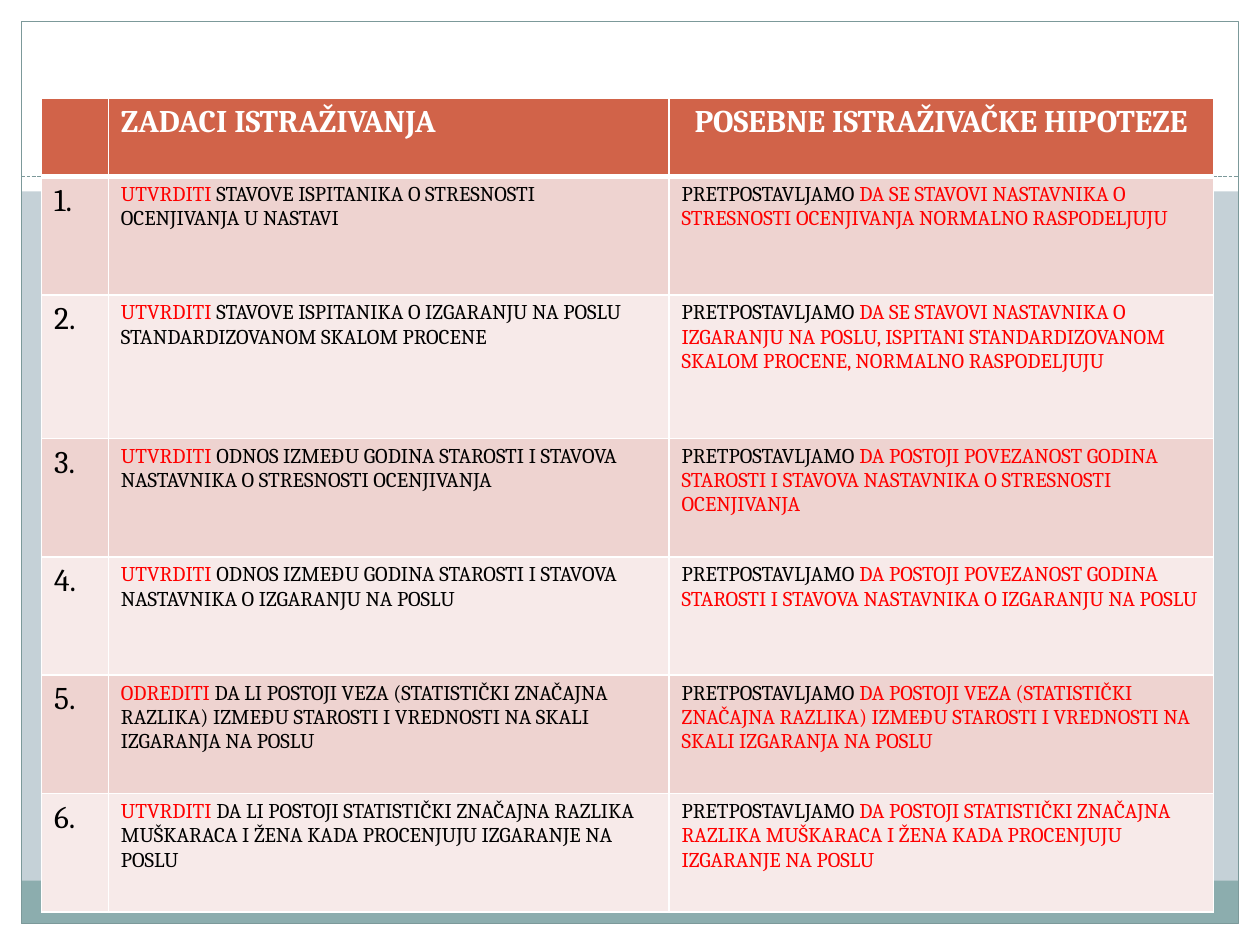
from lxml import etree
from pptx import Presentation, util as u
from pptx.dml.color import RGBColor
from pptx.enum import dml, shapes, text
from pptx.oxml import ns

HUES = {
    "back": "C5D1D7", "white": "FFFFFF", "band": "8CADAE", "edge": "7C999A",
    "head": "D16349", "odd": "EED3D0", "even": "F7EAE9",
    "black": "000000", "red": "FF0000",
}
COLS, ROWS = 100, 75
HEADS = ["", "ZADACI ISTRAŽIVANJA", "POSEBNE ISTRAŽIVAČKE HIPOTEZE"]
GUESS = "PRETPOSTAVLJAMO"
TASKS = [
    ("UTVRDITI", "STAVOVE ISPITANIKA O STRESNOSTI OCENJIVANJA U NASTAVI",
     "DA SE STAVOVI NASTAVNIKA O STRESNOSTI OCENJIVANJA NORMALNO RASPODELJUJU"),
    ("UTVRDITI", "STAVOVE ISPITANIKA O IZGARANJU NA POSLU STANDARDIZOVANOM SKALOM PROCENE",
     "DA SE STAVOVI NASTAVNIKA O IZGARANJU NA POSLU, ISPITANI STANDARDIZOVANOM "
     "SKALOM PROCENE, NORMALNO RASPODELJUJU"),
    ("UTVRDITI", "ODNOS IZMEĐU GODINA STAROSTI I STAVOVA NASTAVNIKA O STRESNOSTI OCENJIVANJA",
     "DA POSTOJI POVEZANOST GODINA STAROSTI I STAVOVA NASTAVNIKA O STRESNOSTI OCENJIVANJA"),
    ("UTVRDITI", "ODNOS IZMEĐU GODINA STAROSTI I STAVOVA NASTAVNIKA O IZGARANJU NA POSLU",
     "DA POSTOJI POVEZANOST GODINA STAROSTI I STAVOVA NASTAVNIKA O IZGARANJU NA POSLU"),
    ("ODREDITI", "DA LI POSTOJI VEZA (STATISTIČKI ZNAČAJNA RAZLIKA) IZMEĐU STAROSTI "
     "I VREDNOSTI NA SKALI IZGARANJA NA POSLU",
     "DA POSTOJI VEZA (STATISTIČKI ZNAČAJNA RAZLIKA) IZMEĐU STAROSTI "
     "I VREDNOSTI NA SKALI IZGARANJA NA POSLU"),
    ("UTVRDITI", "DA LI POSTOJI STATISTIČKI ZNAČAJNA RAZLIKA MUŠKARACA I ŽENA "
     "KADA PROCENJUJU IZGARANJE NA POSLU",
     "DA POSTOJI STATISTIČKI ZNAČAJNA RAZLIKA MUŠKARACA I ŽENA "
     "KADA PROCENJUJU IZGARANJE NA POSLU"),
]


def tint(name):
    return RGBColor.from_string(HUES[name])


class Deck:
    font = "Cambria"
    big, small, thin = u.Pt(18), u.Pt(12), u.Pt(0.75)

    def __init__(self):
        self.prs = Presentation()
        self.prs.slide_width, self.prs.slide_height = u.Inches(10), u.Inches(7.5)
        self.slide = self.prs.slides.add_slide(self.prs.slide_layouts[6])
        fill = self.slide.background.fill
        fill.solid()
        fill.fore_color.rgb = tint("back")

    def x(self, cols):
        return round(self.prs.slide_width * cols / COLS)

    def y(self, rows):
        return round(self.prs.slide_height * rows / ROWS)

    def area(self, left, top, wide, high):
        return self.x(left), self.y(top), self.x(wide), self.y(high)

    def rect(self, *area, fill=None, line=None):
        box = self.slide.shapes.add_shape(shapes.MSO_SHAPE.RECTANGLE, *self.area(*area))
        box.shadow.inherit = False
        for part, hue in ((box.fill, fill), (box.line.fill, line)):
            if hue:
                part.solid()
                part.fore_color.rgb = tint(hue)
            else:
                part.background()
        if line:
            box.line.width = self.thin

    def rule(self, left, right, row, hue):
        line = self.slide.shapes.add_connector(
            shapes.MSO_CONNECTOR.STRAIGHT,
            self.x(left), self.y(row), self.x(right), self.y(row))
        line.line.color.rgb = tint(hue)
        line.line.width = self.thin
        line.line.dash_style = dml.MSO_LINE.SQUARE_DOT
        etree.SubElement(line._element.spPr, ns.qn("a:effectLst"))

    def table(self, left, top, wides, highs):
        area = self.area(left, top, sum(wides), sum(highs))
        grid = self.slide.shapes.add_table(len(highs), len(wides), *area).table
        grid.first_row = grid.horz_banding = False
        for col, wide in zip(grid.columns, wides):
            col.width = self.x(wide)
        for row, high in zip(grid.rows, highs):
            row.height = self.y(high)
        return grid

    def cell(self, cell, fill, runs, size, bold=False, align=None, top=1, base=1):
        cell.fill.solid()
        cell.fill.fore_color.rgb = tint(fill)
        para = cell.text_frame.paragraphs[0]
        para.alignment = align
        for words, hue in runs:
            run = para.add_run()
            run.text = words
            form = {"name": self.font, "size": size, "bold": bold}
            for key, value in form.items():
                setattr(run.font, key, value)
            run.font.color.rgb = tint(hue)
        self.edges(cell, {"L": 1, "R": 1, "T": top, "B": base})

    def edges(self, cell, sides):
        props = cell._tc.get_or_add_tcPr()
        for spot, (side, points) in enumerate(sides.items()):
            line = etree.Element(ns.qn("a:ln" + side), w=str(u.Pt(points)))
            fill = etree.SubElement(line, ns.qn("a:solidFill"))
            etree.SubElement(fill, ns.qn("a:srgbClr"), val=HUES["white"])
            props.insert(spot, line)


def main():
    deck = Deck()
    for area in ((0, 73.3, 100, 1.7), (0, 0, 100, 15.2),
                 (0, 0, 1.7, 75), (98.3, 0, 1.7, 75)):
        deck.rect(*area, fill="white")
    deck.rect(1.7, 69.9, 96.6, 3.4, fill="band")
    deck.rect(1.7, 1.7, 96.6, 71.6, line="edge")
    deck.rule(1.7, 98.3, 14, "edge")

    highs = [6.2] + [9.4] * len(TASKS)
    highs[2] = 11.4
    grid = deck.table(3.3, 7.8, [5.3, 44.5, 43.2], highs)
    for col, words in enumerate(HEADS):
        runs = [(words, "white")] if words else []
        align = text.PP_ALIGN.CENTER if col == 2 else None
        deck.cell(grid.cell(0, col), "head", runs, deck.big, True, align, base=3)
    for row, (verb, task, guess) in enumerate(TASKS, 1):
        fill = "odd" if row % 2 else "even"
        top = 3 if row == 1 else 1
        parts = [
            ([(f"{row}.", "black")], deck.big),
            ([(verb, "red"), (" " + task, "black")], deck.small),
            ([(GUESS, "black"), (" " + guess, "red")], deck.small),
        ]
        for col, (runs, size) in enumerate(parts):
            deck.cell(grid.cell(row, col), fill, runs, size, top=top)
    deck.prs.save("out.pptx")


if __name__ == "__main__":
    main()
